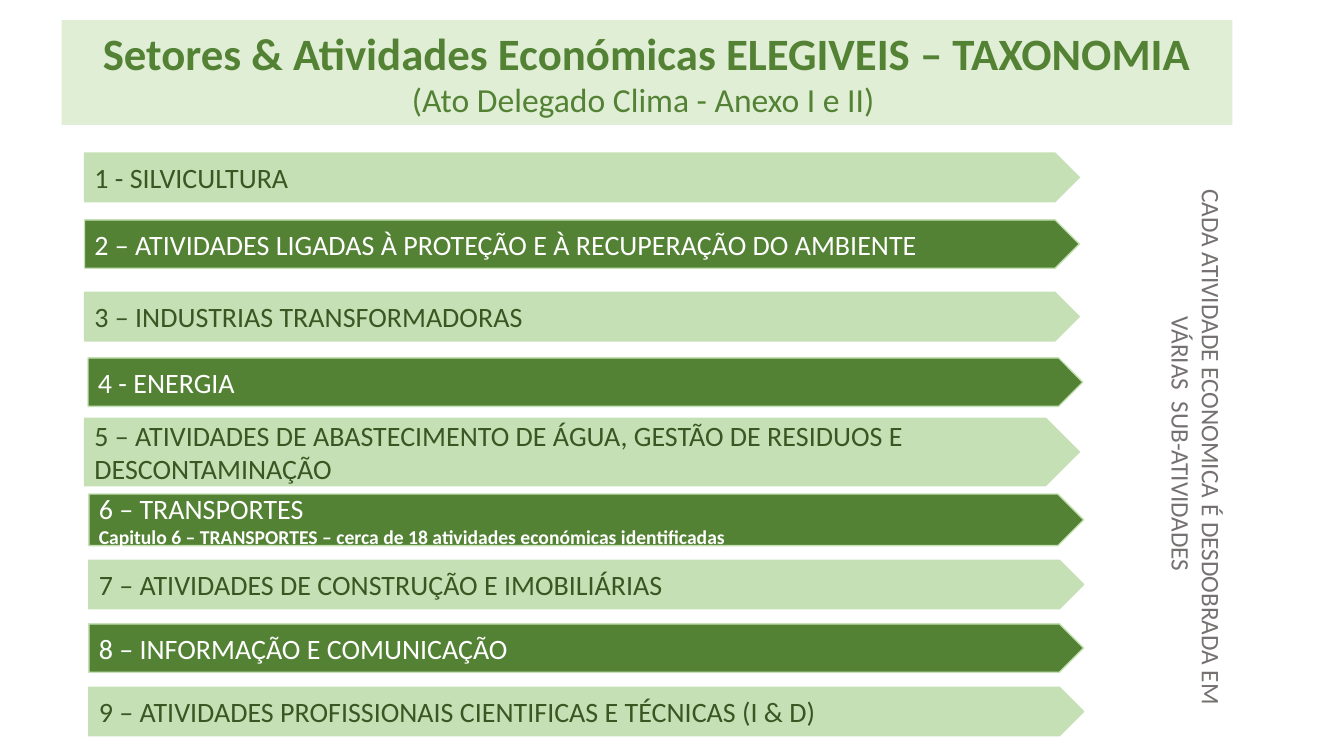
"""Build the slide of eligible sectors and economic activities."""
from pptx import Presentation
from pptx.dml.color import RGBColor
from pptx.enum.shapes import MSO_SHAPE
from pptx.enum.text import MSO_ANCHOR, MSO_AUTO_SIZE, PP_ALIGN
from pptx.util import Cm, Pt

WHITE = RGBColor(0xFF, 0xFF, 0xFF)
MIST = RGBColor(0xE0, 0xEE, 0xD6)
LIGHT_GREEN = RGBColor(0xC5, 0xE0, 0xB4)
GREEN = RGBColor(0x54, 0x82, 0x35)
DARK_GREEN = RGBColor(0x38, 0x57, 0x23)
GREY = RGBColor(0x76, 0x71, 0x71)

SECTORS = [
    (2.13, 3.86, 1.22, ["1 - SILVICULTURA"]),
    (2.13, 5.54, 1.22, ["2 – ATIVIDADES LIGADAS À PROTEÇÃO E À RECUPERAÇÃO DO AMBIENTE"]),
    (2.13, 7.37, 1.22, ["3 – INDUSTRIAS TRANSFORMADORAS"]),
    (2.22, 9.02, 1.22, ["4 - ENERGIA"]),
    (2.13, 10.54, 1.7, ["5 – ATIVIDADES DE ABASTECIMENTO DE ÁGUA, GESTÃO DE RESIDUOS E DESCONTAMINAÇÃO"]),
    (2.24, 12.45, 1.3, ["6 – TRANSPORTES",
                        "Capitulo 6 – TRANSPORTES – cerca de 18 atividades económicas identificadas"]),
    (2.24, 14.12, 1.22, ["7 – ATIVIDADES DE CONSTRUÇÃO E IMOBILIÁRIAS"]),
    (2.24, 15.72, 1.22, ["8 – INFORMAÇÃO E COMUNICAÇÃO"]),
    (2.24, 17.32, 1.22, ["9 – ATIVIDADES PROFISSIONAIS CIENTIFICAS E TÉCNICAS (I & D)"]),
]


class SectorSlide:
    """Hold the style and the current slide."""

    font_name = "Calibri"
    arrow_width = 25.07

    def __init__(self, presentation):
        """Add a title-only slide."""
        self.slide = presentation.slides.add_slide(presentation.slide_layouts[5])

    def set_text(self, shape, lines, color, alignment, anchor):
        """Fill a shape with (text, size, bold) lines."""
        frame = shape.text_frame
        frame_format = {"word_wrap": True, "auto_size": MSO_AUTO_SIZE.NONE,
                        "vertical_anchor": anchor,
                        "margin_left": Cm(0.25), "margin_right": Cm(0.25),
                        "margin_top": Cm(0.13), "margin_bottom": Cm(0.13)}
        for name, value in frame_format.items():
            setattr(frame, name, value)
        for index, (text, size, bold) in enumerate(lines):
            paragraph = frame.add_paragraph() if index else frame.paragraphs[0]
            paragraph.alignment = alignment
            paragraph.line_spacing = 1.0
            run = paragraph.add_run()
            run.text = text
            font_format = {"name": self.font_name, "size": Pt(size), "bold": bold}
            for name, value in font_format.items():
                setattr(run.font, name, value)
            run.font.color.rgb = color

    def title(self, lines):
        """Place the title on its pale band."""
        shape = self.slide.shapes.title
        place = {"left": Cm(1.55), "top": Cm(0.51), "width": Cm(29.51), "height": Cm(2.64)}
        for name, value in place.items():
            setattr(shape, name, value)
        shape.fill.solid()
        shape.fill.fore_color.rgb = MIST
        self.set_text(shape, lines, GREEN, PP_ALIGN.CENTER, MSO_ANCHOR.TOP)

    def arrow(self, left, top, height, texts, fill, color):
        """Add a sector arrow with an optional bold note."""
        shape = self.slide.shapes.add_shape(
            MSO_SHAPE.PENTAGON, Cm(left), Cm(top), Cm(self.arrow_width), Cm(height))
        shape.shadow.inherit = False
        shape.fill.solid()
        shape.fill.fore_color.rgb = fill
        shape.line.color.rgb = LIGHT_GREEN
        shape.line.width = Pt(1)
        lines = [(text, 14 if index else 20, index > 0) for index, text in enumerate(texts)]
        self.set_text(shape, lines, color, PP_ALIGN.LEFT, MSO_ANCHOR.MIDDLE)

    def side_note(self, text):
        """Add the note turned along the right edge."""
        shape = self.slide.shapes.add_textbox(Cm(22.81), Cm(10.36), Cm(14.68), Cm(1.8))
        shape.rotation = 90
        self.set_text(shape, [(text, 18, False)], GREY, PP_ALIGN.CENTER, MSO_ANCHOR.TOP)


def main():
    """Build and save the presentation."""
    presentation = Presentation()
    presentation.slide_width = Cm(33.87)
    presentation.slide_height = Cm(19.05)
    slide = SectorSlide(presentation)
    slide.title([("Setores & Atividades Económicas ELEGIVEIS – TAXONOMIA", 32, True),
                 ("(Ato Delegado Clima - Anexo I e II) ", 24, False)])
    schemes = [(LIGHT_GREEN, DARK_GREEN), (GREEN, WHITE)]
    for index, sector in enumerate(SECTORS):
        slide.arrow(*sector, *schemes[index % 2])
    slide.side_note("CADA ATIVIDADE ECONOMICA É DESDOBRADA EM VÁRIAS  SUB-ATIVIDADES ")
    presentation.save("out.pptx")


if __name__ == "__main__":
    main()
